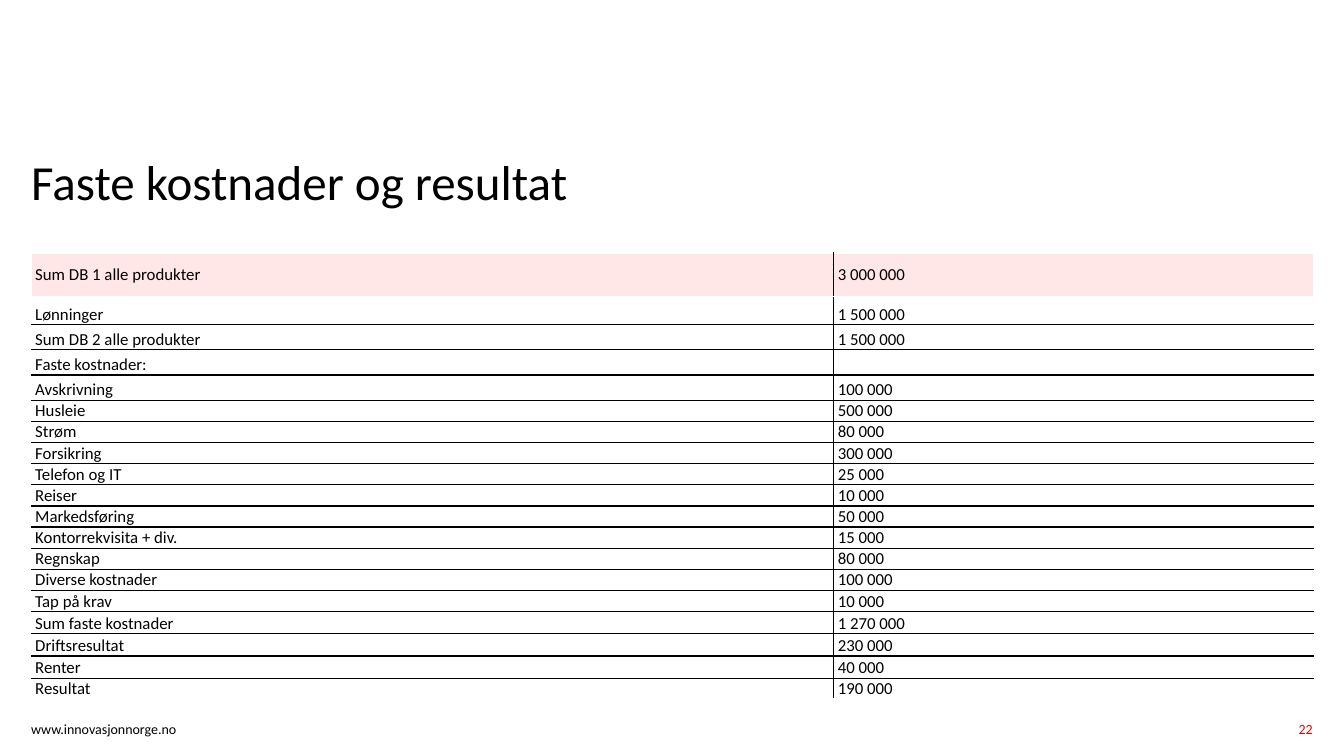
from dataclasses import dataclass

import pptx
import pptx.dml.color
import pptx.enum.text
import pptx.oxml
import pptx.oxml.ns
import pptx.util
from pptx.util import Inches


@dataclass(frozen=True)
class Theme:
    font: str = "Calibri"
    black: str = "000000"
    white: str = "FFFFFF"
    red: str = "ED0000"
    pink: str = "FFE7E7"
    title_size: int = 35
    table_size: int = 12
    footer_size: int = 10
    border_width: int = 1


THEME = Theme()

BUDGET = [
    # label, amount, row height
    ("Sum DB 1 alle produkter", "3 000 000", 0.43),
    ("Lønninger", "1 500 000", 0.28),
    ("Sum DB 2 alle produkter", "1 500 000", 0.25),
    ("Faste kostnader:", "", 0.25),
    ("Avskrivning", "100 000", 0.25),
    ("Husleie", "500 000", 0.21),
    ("Strøm", "80 000", 0.21),
    ("Forsikring", "300 000", 0.21),
    ("Telefon og IT", "25 000", 0.21),
    ("Reiser", "10 000", 0.21),
    ("Markedsføring", "50 000", 0.21),
    ("Kontorrekvisita + div.", "15 000", 0.21),
    ("Regnskap", "80 000", 0.21),
    ("Diverse kostnader", "100 000", 0.21),
    ("Tap på krav", "10 000", 0.21),
    ("Sum faste kostnader", "1 270 000", 0.22),
    ("Driftsresultat", "230 000", 0.22),
    ("Renter", "40 000", 0.22),
    ("Resultat", "190 000", 0.2),
]
COLUMN_WIDTHS = (7.96, 4.76)


def rgb(color):
    return pptx.dml.color.RGBColor.from_string(color)


def style_paragraph(para, size, color):
    para.font.name = THEME.font
    para.font.size = pptx.util.Pt(size)
    para.font.color.rgb = rgb(color)


def add_text(page, text, left, top, width, height, size, color=THEME.black,
             align=pptx.enum.text.PP_ALIGN.LEFT, line_spacing=1.0):
    box = page.shapes.add_textbox(Inches(left), Inches(top), Inches(width), Inches(height))
    frame = box.text_frame
    frame.word_wrap = True
    frame.margin_left = frame.margin_right = frame.margin_top = frame.margin_bottom = 0
    para = frame.paragraphs[0]
    para.text = text
    para.alignment = align
    para.line_spacing = line_spacing
    style_paragraph(para, size, color)


def set_borders(cell, colors):
    """Draw the left, right, top and bottom borders, in that order."""
    properties = cell._tc.get_or_add_tcPr()
    width = pptx.util.Pt(THEME.border_width)
    for side, color in zip("LRTB", colors):
        properties.append(pptx.oxml.parse_xml(
            f'<a:ln{side} {pptx.oxml.ns.nsdecls("a")} w="{width}">'
            f'<a:solidFill><a:srgbClr val="{color}"/></a:solidFill></a:ln{side}>'))


def fill_cell(cell, text, is_header):
    cell.margin_left = Inches(0.04)
    cell.margin_right = cell.margin_top = cell.margin_bottom = 0
    anchors = pptx.enum.text.MSO_ANCHOR
    cell.vertical_anchor = anchors.MIDDLE if is_header else anchors.BOTTOM
    if is_header:
        cell.fill.solid()
        cell.fill.fore_color.rgb = rgb(THEME.pink)
    else:
        cell.fill.background()
    para = cell.text_frame.paragraphs[0]
    para.text = text
    style_paragraph(para, THEME.table_size, THEME.black)
    if not text:
        # An empty cell takes its line height from the end mark
        end_mark = pptx.oxml.parse_xml(
            f'<a:endParaRPr {pptx.oxml.ns.nsdecls("a")} sz="{THEME.table_size * 100}"/>')
        para._p.append(end_mark)


def add_budget_table(page, left, top):
    height = sum(row[-1] for row in BUDGET)
    table = page.shapes.add_table(
        len(BUDGET), len(COLUMN_WIDTHS), Inches(left), Inches(top),
        Inches(sum(COLUMN_WIDTHS)), Inches(height)).table
    table.first_row = table.horz_banding = False
    for column, width in zip(table.columns, COLUMN_WIDTHS):
        column.width = Inches(width)

    # Black lines lie between the columns and between the rows below the header
    vertical = (THEME.white, THEME.black, THEME.white)
    horizontal = [THEME.white] * 2 + [THEME.black] * (len(BUDGET) - 2) + [THEME.white]
    for i, (label, amount, row_height) in enumerate(BUDGET):
        table.rows[i].height = Inches(row_height)
        for j, text in enumerate((label, amount)):
            cell = table.cell(i, j)
            set_borders(cell, vertical[j:j + 2] + tuple(horizontal[i:i + 2]))
            fill_cell(cell, text, is_header=i == 0)


def main():
    deck = pptx.Presentation()
    deck.slide_width, deck.slide_height = Inches(13.33), Inches(7.5)
    page = deck.slides.add_slide(deck.slide_layouts[6])
    add_text(page, "www.innovasjonnorge.no", 0.31, 7.15, 2.85, 0.19, THEME.footer_size)
    add_text(page, "Faste kostnader og resultat", 0.31, 1.57, 6.33, 1.41,
             THEME.title_size, line_spacing=0.9)
    add_text(page, "22", 11.94, 7.15, 1.08, 0.24, THEME.footer_size, THEME.red,
             pptx.enum.text.PP_ALIGN.RIGHT)
    add_budget_table(page, 0.31, 2.51)
    deck.save("out.pptx")


if __name__ == "__main__":
    main()
